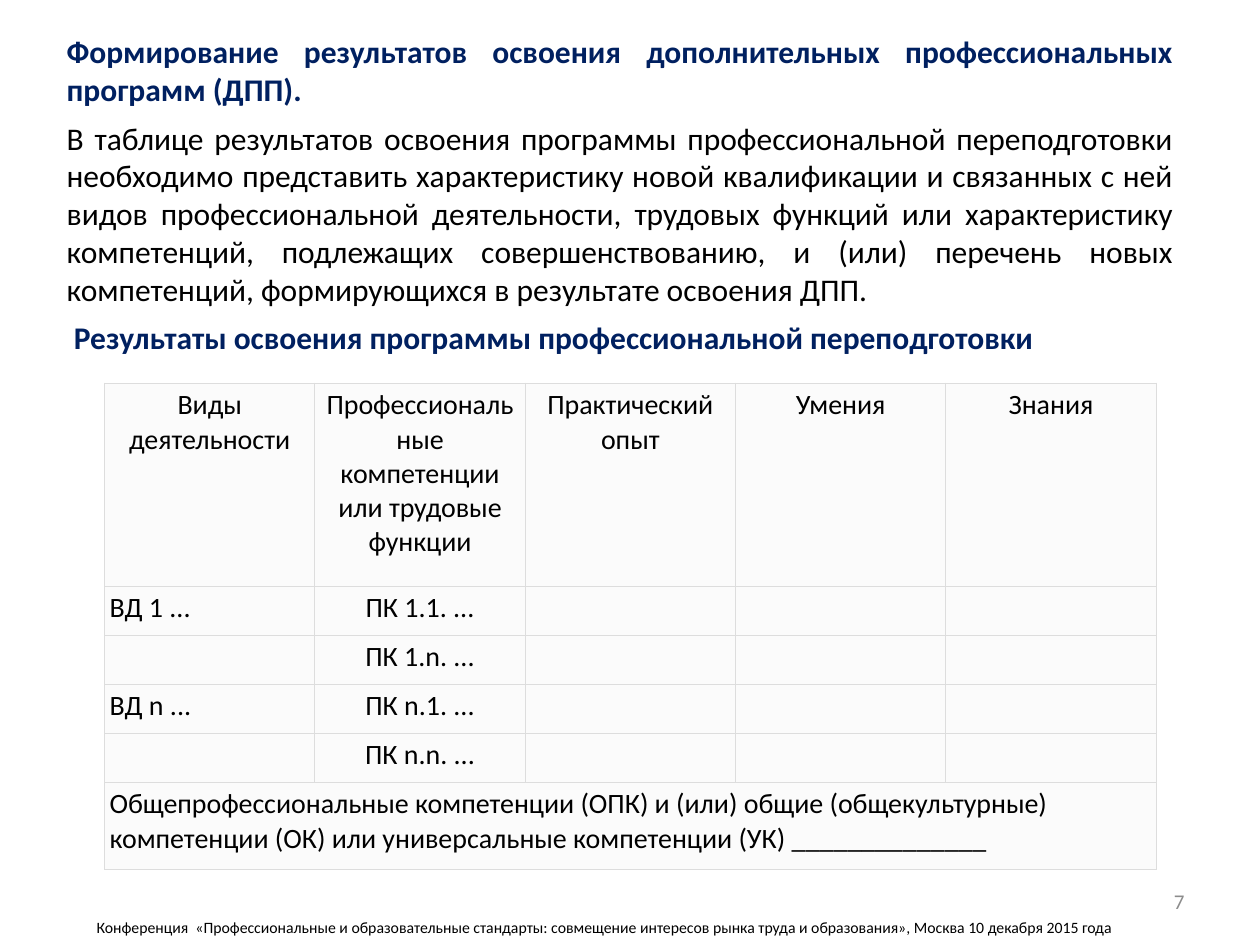
from lxml.etree import SubElement
from pptx import Presentation
from pptx.dml.color import RGBColor
from pptx.enum.text import MSO_ANCHOR, PP_ALIGN
from pptx.oxml.ns import qn
from pptx.util import Pt

COLORS = {
    "navy": "002060",
    "black": "000000",
    "gray": "8C8C8C",
    "cell": "FBFBFB",
    "border": "DDDDDD",
}
HEADERS = [
    "Виды деятельности",
    "Профессиональные компетенции или трудовые функции",
    "Практический опыт",
    "Умения",
    "Знания",
]
ROWS = [
    ["ВД 1 ...", "ПК 1.1. ..."],
    ["", "ПК 1.n. ..."],
    ["ВД n ...", "ПК n.1. ..."],
    ["", "ПК n.n. ..."],
]
GENERAL_COMPETENCIES = (
    "Общепрофессиональные компетенции (ОПК) и (или) общие (общекультурные) "
    "компетенции (ОК) или универсальные компетенции (УК) ______________"
)
INTRODUCTION = [
    ("Формирование результатов освоения дополнительных профессиональных "
     "программ (ДПП). ", "navy", True),
    ("В таблице результатов освоения программы профессиональной переподготовки "
     "необходимо представить характеристику новой квалификации и связанных с ней "
     "видов профессиональной деятельности, трудовых функций или характеристику "
     "компетенций, подлежащих совершенствованию, и (или) перечень новых "
     "компетенций, формирующихся в результате освоения ДПП.", "black", False),
    (" Результаты освоения программы профессиональной переподготовки ",
     "navy", True),
]
CONFERENCE = (
    "Конференция  «Профессиональные и образовательные стандарты: совмещение "
    "интересов рынка труда и образования», Москва 10 декабря 2015 года"
)


def apply(target, values):
    for name, value in values.items():
        setattr(target, name, value)


class SlideBuilder:
    font_name = "Calibri"
    cell_margin = Pt(2.88)
    border_width = Pt(0.75)

    def __init__(self, slide):
        self.slide = slide

    def fill_paragraph(self, paragraph, text, size, color="black", bold=False,
                       alignment=PP_ALIGN.LEFT, space_before=0):
        apply(paragraph, {"alignment": alignment, "space_before": Pt(space_before)})
        if text:
            run = paragraph.add_run()
            run.text = text
            apply(run.font, {"name": self.font_name, "size": Pt(size), "bold": bold})
            run.font.color.rgb = RGBColor.from_string(COLORS[color])

    def title(self, text, left, top, width, height, size):
        shape = self.slide.shapes.title
        apply(shape, {"left": Pt(left), "top": Pt(top),
                      "width": Pt(width), "height": Pt(height)})
        apply(shape.text_frame, {"word_wrap": True,
                                 "vertical_anchor": MSO_ANCHOR.MIDDLE})
        self.fill_paragraph(shape.text_frame.paragraphs[0], text, size)

    def text_box(self, entries, left, top, width, height, size, alignment,
                 anchor=MSO_ANCHOR.TOP, space_before=0):
        shape = self.slide.shapes.add_textbox(Pt(left), Pt(top), Pt(width), Pt(height))
        frame = shape.text_frame
        apply(frame, {"word_wrap": True, "vertical_anchor": anchor})
        for index, (text, color, bold) in enumerate(entries):
            paragraph = frame.add_paragraph() if index else frame.paragraphs[0]
            self.fill_paragraph(paragraph, text, size, color, bold, alignment,
                                space_before)

    def border(self, cell):
        properties = cell._tc.get_or_add_tcPr()
        for side in ("a:lnL", "a:lnR", "a:lnT", "a:lnB"):
            line = SubElement(properties, qn(side), w=str(self.border_width))
            fill = SubElement(line, qn("a:solidFill"))
            SubElement(fill, qn("a:srgbClr"), val=COLORS["border"])

    def cell(self, cell, text, size, alignment):
        apply(cell, {f"margin_{side}": self.cell_margin
                     for side in ("left", "right", "top", "bottom")})
        self.border(cell)
        cell.fill.solid()
        cell.fill.fore_color.rgb = RGBColor.from_string(COLORS["cell"])
        self.fill_paragraph(cell.text_frame.paragraphs[0], text, size,
                            alignment=alignment)

    def table(self, headers, rows, summary, left, top, width, heights, size):
        content = [headers, *rows, [summary]]
        columns = len(headers)
        table = self.slide.shapes.add_table(
            len(content), columns, Pt(left), Pt(top), Pt(width), Pt(sum(heights))
        ).table
        apply(table, {"first_row": False, "horz_banding": False})
        for column in table.columns:
            column.width = Pt(width / columns)
        for row_index, texts in enumerate(content):
            table.rows[row_index].height = Pt(heights[row_index])
            for column_index in range(columns):
                text = texts[column_index] if column_index < len(texts) else ""
                centered = row_index == 0 or column_index > 0
                self.cell(table.cell(row_index, column_index), text, size,
                          PP_ALIGN.CENTER if centered else PP_ALIGN.LEFT)
        last_row = len(content) - 1
        table.cell(last_row, 0).merge(table.cell(last_row, columns - 1))


def main():
    presentation = Presentation()
    apply(presentation, {"slide_width": Pt(720), "slide_height": Pt(540)})
    slide = presentation.slides.add_slide(presentation.slide_layouts[5])
    builder = SlideBuilder(slide)
    builder.title(CONFERENCE, 48, 519, 612, 22, 9)
    builder.text_box(INTRODUCTION, 31, 15, 646.5, 448, 18, PP_ALIGN.JUSTIFY,
                     space_before=6)
    builder.text_box([("7", "gray", False)], 516, 500.5, 168, 28.75, 12,
                     PP_ALIGN.RIGHT, MSO_ANCHOR.MIDDLE)
    builder.table(HEADERS, ROWS, GENERAL_COMPETENCIES, 59.75, 219, 601,
                  [116, *[28] * len(ROWS), 50], 16)
    presentation.save("out.pptx")


if __name__ == "__main__":
    main()
